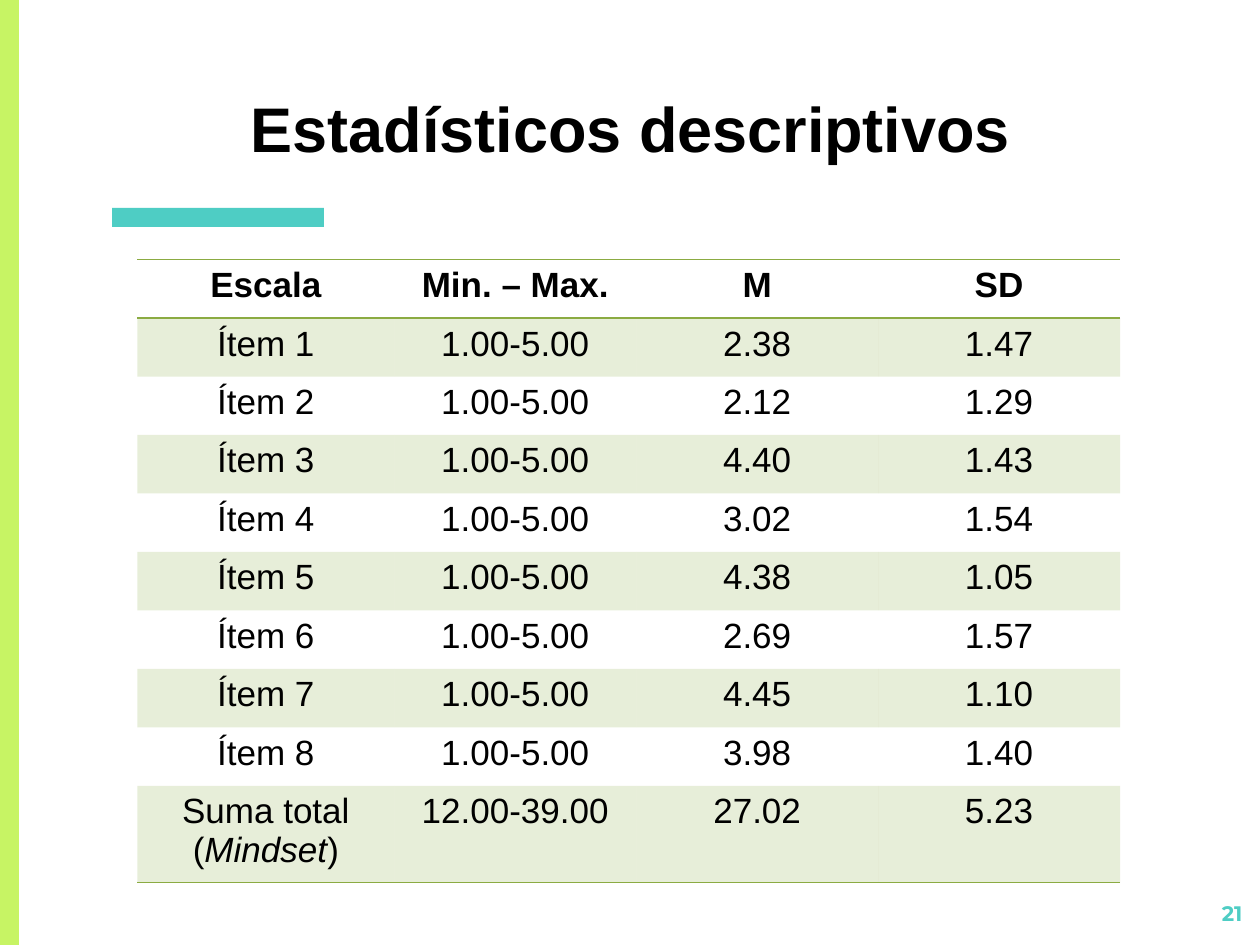
from lxml import etree
from pptx import Presentation
from pptx.dml.color import RGBColor
from pptx.enum import shapes, text
from pptx.oxml import ns
from pptx.util import Inches, Pt

TITLE = "Estadísticos descriptivos"
PAGE_NUMBER = "21"
HEADER = ("Escala", "Min. – Max.", "M", "SD")
ITEM_RANGE = "1.00-5.00"
ITEM_STATS = [
    ("2.38", "1.47"), ("2.12", "1.29"), ("4.40", "1.43"), ("3.02", "1.54"),
    ("4.38", "1.05"), ("2.69", "1.57"), ("4.45", "1.10"), ("3.98", "1.40"),
]
TOTAL = ("Suma total", "12.00-39.00", "27.02", "5.23")
TOTAL_NOTE = [("(", False), ("Mindset", True), (")", False)]

BLACK = RGBColor(0x00, 0x00, 0x00)
TEAL = RGBColor(0x4E, 0xCD, 0xC4)
LIME = RGBColor(0xC7, 0xF4, 0x64)
GREEN = RGBColor(0x8B, 0xAB, 0x42)
BAND_OPACITY = 20
NO_STYLE_NO_GRID = "{2D5ABB26-0587-4C30-8999-92F81FD0307C}"

CENTER, RIGHT = text.PP_ALIGN.CENTER, text.PP_ALIGN.RIGHT


def style(paragraph, size, font_name, color, bold, align):
    paragraph.alignment = align
    font = paragraph.font
    font.size, font.name, font.bold = Pt(size), font_name, bold
    font.color.rgb = color


def add_bar(slide, box, color):
    bar = slide.shapes.add_shape(shapes.MSO_SHAPE.RECTANGLE, *map(Inches, box))
    bar.shadow.inherit = False
    bar.fill.solid()
    bar.fill.fore_color.rgb = color
    bar.line.fill.background()


def add_label(slide, box, words, anchor, **look):
    frame = slide.shapes.add_textbox(*map(Inches, box)).text_frame
    frame.word_wrap = True
    frame.vertical_anchor = anchor
    frame.margin_left = frame.margin_right = Inches(0.1)
    frame.margin_top = frame.margin_bottom = Inches(0.1)
    frame.text = words
    style(frame.paragraphs[0], **look)


def add_border(cell, side):
    """Draw a 1 pt green rule; side is lnT or lnB, top first."""
    line = etree.SubElement(cell._tc.get_or_add_tcPr(), ns.qn("a:" + side), w=str(Pt(1)))
    solid = etree.SubElement(line, ns.qn("a:solidFill"))
    etree.SubElement(solid, ns.qn("a:srgbClr"), val=str(GREEN))


def fill_band(cell):
    cell.fill.solid()
    cell.fill.fore_color.rgb = GREEN
    color = cell._tc.tcPr.find(ns.qn("a:solidFill")).find(ns.qn("a:srgbClr"))
    etree.SubElement(color, ns.qn("a:alpha"), val=str(BAND_OPACITY * 1000))


def add_stats_table(slide):
    items = [(f"Ítem {n}", ITEM_RANGE, *stats) for n, stats in enumerate(ITEM_STATS, 1)]
    rows = [HEADER, *items, TOTAL]
    last = len(rows) - 1
    table = slide.shapes.add_table(
        len(rows), len(HEADER), Inches(1.09), Inches(2.06), Inches(7.8), Inches(4.9)).table
    table._tbl.tblPr.find(ns.qn("a:tableStyleId")).text = NO_STYLE_NO_GRID

    for c, column in enumerate(table.columns):
        column.width = Inches(1.92 if c else 2.04)
    for r, row in enumerate(table.rows):
        row.height = Inches(0.72) if r == last else Inches(4.18) // last

    for r, values in enumerate(rows):
        for c, value in enumerate(values):
            cell = table.cell(r, c)
            cell.text = value
            if r == last and c == 0:
                note = cell.text_frame.add_paragraph()
                for words, italic in TOTAL_NOTE:
                    run = note.add_run()
                    run.text, run.font.italic = words, italic
            for paragraph in cell.text_frame.paragraphs:
                style(paragraph, 20, "Arial", BLACK, r == 0, CENTER)
            if r == 0:
                add_border(cell, "lnT")
            if r in (0, last):
                add_border(cell, "lnB")
            if r % 2:
                fill_band(cell)
            else:
                cell.fill.background()


def main():
    deck = Presentation()
    deck.slide_width, deck.slide_height = Inches(10), Inches(7.5)
    slide = deck.slides.add_slide(deck.slide_layouts[6])
    add_bar(slide, (0.89, 1.65, 1.68, 0.15), TEAL)
    add_bar(slide, (0, 0, 0.15, 7.5), LIME)
    add_label(slide, (0.76, 0, 8.49, 1.41), TITLE, text.MSO_ANCHOR.BOTTOM,
              size=36, font_name="Arial", color=BLACK, bold=True, align=CENTER)
    add_label(slide, (9.36, 7.05, 0.6, 0.45), PAGE_NUMBER, text.MSO_ANCHOR.TOP,
              size=12, font_name="Montserrat", color=TEAL, bold=True, align=RIGHT)
    add_stats_table(slide)
    deck.save("out.pptx")


if __name__ == "__main__":
    main()
